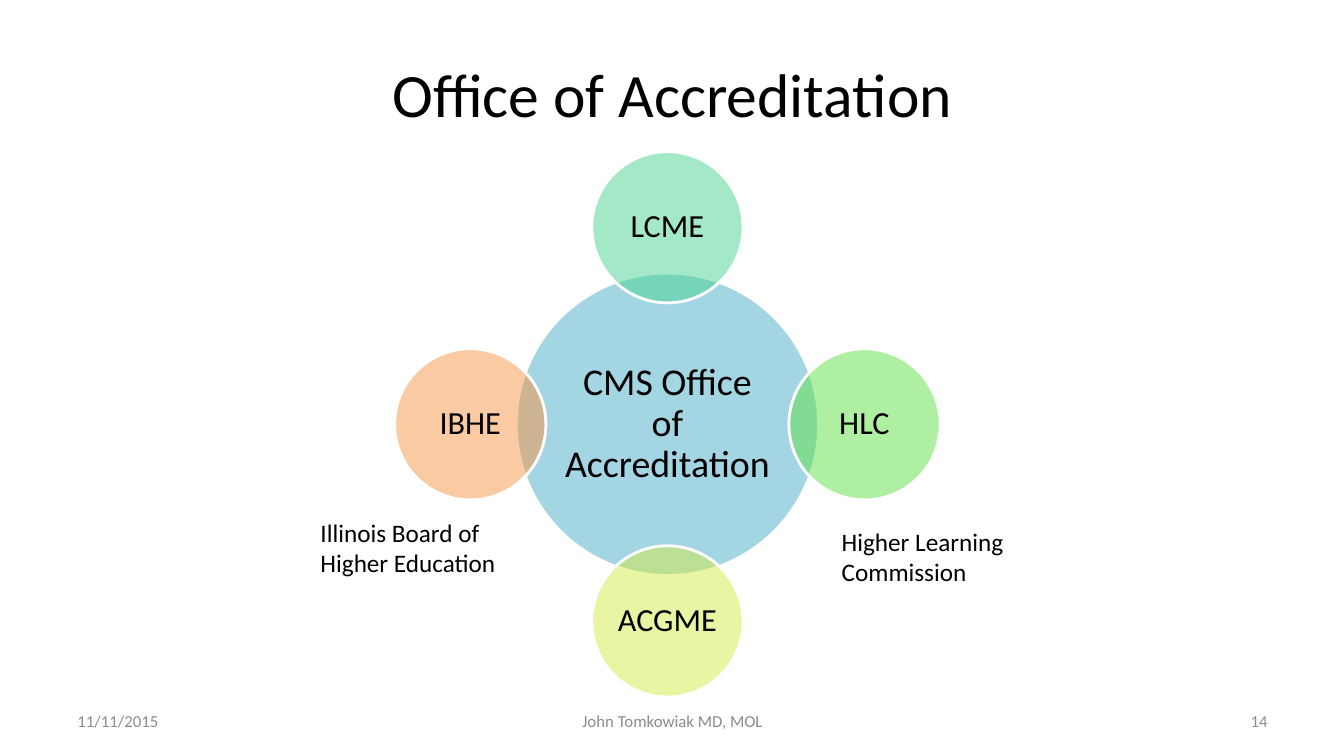
import math
from dataclasses import dataclass

import pptx
import pptx.dml.color
import pptx.enum.shapes
import pptx.enum.text
import pptx.oxml.ns
import pptx.util
from lxml import etree

Inches, Pt = pptx.util.Inches, pptx.util.Pt
RGB = pptx.dml.color.RGBColor.from_string
ALIGN = pptx.enum.text.PP_ALIGN
MIDDLE = pptx.enum.text.MSO_ANCHOR.MIDDLE


@dataclass(frozen=True)
class Theme:
    font: str = "Calibri"
    text: str = "000000"
    muted: str = "8C8C8C"
    outline: str = "FFFFFF"
    hub: str = "4BACC6"
    title_size: int = 44
    hub_size: int = 27
    node_size: int = 23
    note_size: int = 18
    footer_size: int = 12


THEME = Theme()
HUB_CENTER = (6.62, 4.21)
HUB_SIZE, NODE_SIZE, ORBIT = 3, 1.5, 1.955

# Outer circles, clockwise from the top
NODES = [
    ("LCME", "48D491"),
    ("HLC", "60E146"),
    ("ACGME", "D5EC46"),
    ("IBHE", "F79646"),
]
NOTES = [
    ("Higher Learning Commission", 8.25, 5.17, 2.83),
    ("Illinois Board of Higher Education", 3.08, 5.08, 2.08),
]
FOOTERS = [
    ("11/11/2015", 0.67, 3.11, ALIGN.LEFT),
    ("John Tomkowiak MD, MOL", 4.56, 4.22, ALIGN.CENTER),
    ("14", 9.56, 3.11, ALIGN.RIGHT),
]


def write(tf, text, size, align=ALIGN.LEFT, color=THEME.text):
    tf.word_wrap = True
    p = tf.paragraphs[0]
    p.alignment = align
    r = p.add_run()
    r.text = text
    r.font.name = THEME.font
    r.font.size = Pt(size)
    r.font.color.rgb = RGB(color)
    return p


def add_title(slide, text):
    sp = slide.shapes.title
    sp.left, sp.top = Inches(0.67), Inches(0.3)
    sp.width, sp.height = Inches(12), Inches(1.25)
    sp.text_frame.vertical_anchor = MIDDLE
    write(sp.text_frame, text, THEME.title_size, ALIGN.CENTER)


def add_circle(slide, text, center, diameter, color, size, inset):
    x, y = center
    sp = slide.shapes.add_shape(
        pptx.enum.shapes.MSO_SHAPE.OVAL,
        Inches(x - diameter / 2), Inches(y - diameter / 2),
        Inches(diameter), Inches(diameter))
    sp.shadow.inherit = False
    sp.fill.solid()
    sp.fill.fore_color.rgb = RGB(color)
    # Half-transparent fill
    qn = pptx.oxml.ns.qn
    fill = sp._element.spPr.find(qn("a:solidFill"))
    etree.SubElement(fill[0], qn("a:alpha"), val="50000")
    sp.line.color.rgb = RGB(THEME.outline)
    sp.line.width = Pt(2)
    tf = sp.text_frame
    tf.margin_left = tf.margin_right = Inches(inset)
    tf.margin_top = tf.margin_bottom = Inches(inset)
    tf.vertical_anchor = MIDDLE
    write(tf, text, size, ALIGN.CENTER).line_spacing = 0.9


def add_text(slide, text, left, top, width, height):
    box = slide.shapes.add_textbox(
        Inches(left), Inches(top), Inches(width), Inches(height))
    return box.text_frame


def main():
    prs = pptx.Presentation()
    prs.slide_width, prs.slide_height = Inches(13.33), Inches(7.5)
    slide = prs.slides.add_slide(prs.slide_layouts.get_by_name("Title Only"))
    add_title(slide, "Office of Accreditation")

    # Hub with circles at quarter turns around it
    add_circle(slide, "CMS Office of Accreditation", HUB_CENTER, HUB_SIZE,
               THEME.hub, THEME.hub_size, 0.04)
    for i, (text, color) in enumerate(NODES):
        angle = 2 * math.pi * i / len(NODES)
        center = (HUB_CENTER[0] + ORBIT * math.sin(angle),
                  HUB_CENTER[1] - ORBIT * math.cos(angle))
        add_circle(slide, text, center, NODE_SIZE, color,
                   THEME.node_size, 0.03)

    # Full names beside the circles
    for text, left, top, width in NOTES:
        tf = add_text(slide, text, left, top, width, 0.71)
        write(tf, text, THEME.note_size)

    # Date, author and slide number
    for text, left, width, align in FOOTERS:
        tf = add_text(slide, text, left, 6.95, width, 0.4)
        tf.vertical_anchor = MIDDLE
        write(tf, text, THEME.footer_size, align, THEME.muted)

    prs.save("out.pptx")


if __name__ == "__main__":
    main()
